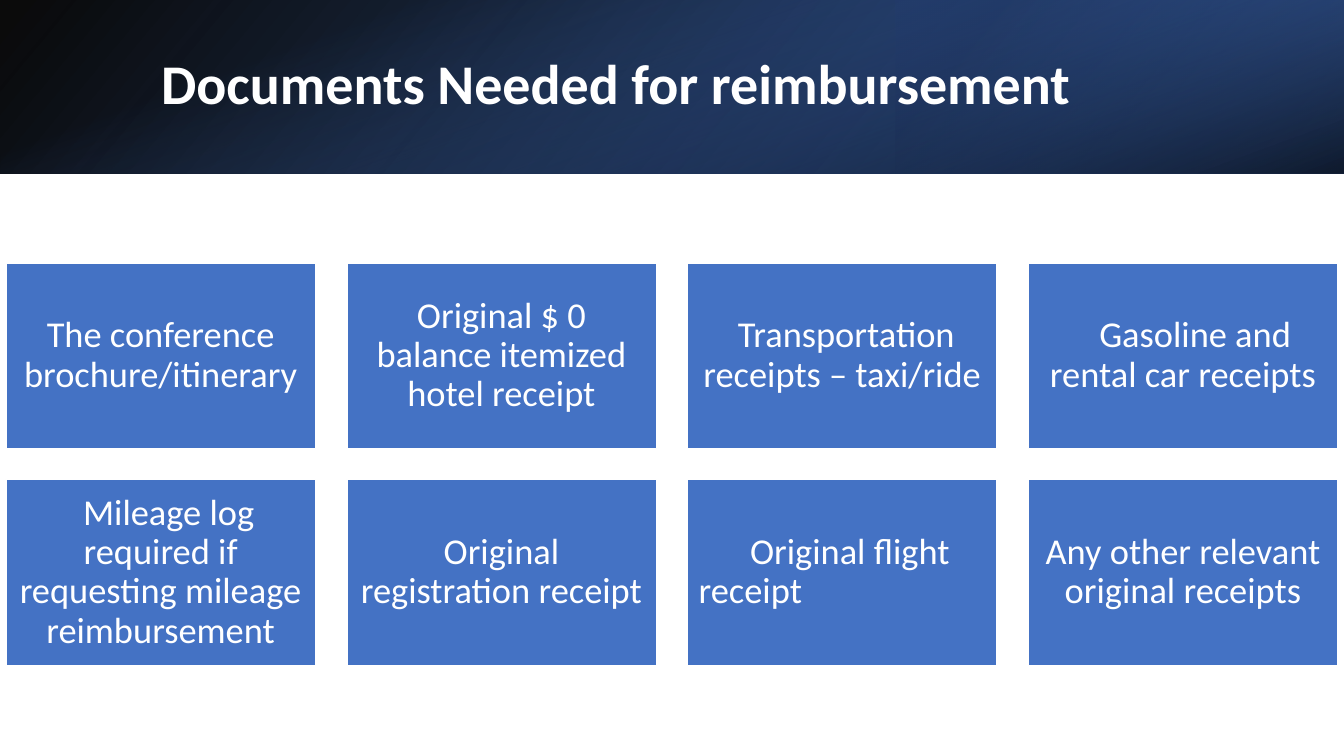
"""Slide listing the documents needed for reimbursement."""
from lxml import etree
from pptx import Presentation
from pptx import util as u
from pptx.dml.color import RGBColor
from pptx.enum import shapes, text
from pptx.oxml.ns import qn

WHITE = RGBColor(255, 255, 255)
BLACK = RGBColor(0, 0, 0)
BLUE = RGBColor(0x44, 0x72, 0xC4)
DEEP = RGBColor(0x2F, 0x55, 0x97)
NAVY = RGBColor(0x20, 0x38, 0x64)

WIDE, HIGH, BAND = 13.33, 7.5, 1.72
TITLE = "Documents Needed for reimbursement"
MID, LEFT = text.PP_ALIGN.CENTER, text.PP_ALIGN.LEFT
CARDS = [
    ("The conference brochure/itinerary", MID, 0),
    ("Original $ 0 balance itemized hotel receipt", MID, 0),
    ("Transportation receipts – taxi/ride", MID, 0.08),
    ("Gasoline and rental car receipts", MID, 0.24),
    ("Mileage log required if requesting mileage reimbursement", MID, 0.16),
    ("Original registration receipt", MID, 0),
    ("Original flight receipt", LEFT, 0.51),
    ("Any other relevant original receipts", MID, 0),
]
COLS, CARD_W, CARD_H, GAP = 4, 3.07, 1.84, 0.31
EDGE, TOP = 0.06, 2.61
SIDE = (WIDE - BAND) / 2
LAYERS = [
    ((0, 0, WIDE, BAND), 0, True, 140, [(0, BLACK, 96), (100, DEEP, 100 - 4)]),
    ((WIDE * 2 / 3, 0, WIDE / 3, BAND), 180, True, 320,
     [(19, NAVY, 68), (100, BLUE, 79)]),
    ((SIDE, -SIDE, BAND, WIDE), 90, False, 340,
     [(23, BLUE, 0), (99, BLACK, 74)]),
]
LAYERS[0][4][1] = (100, DEEP, 100)


def rect(slide, box):
    part = slide.shapes.add_shape(shapes.MSO_SHAPE.RECTANGLE, *map(u.Inches, box))
    part.shadow.inherit = False
    return part


def layer(slide, box, turn, flip, angle, stops):
    part = rect(slide, box)
    part.rotation = turn
    part.line.fill.background()
    if flip:
        part._element.spPr.find(qn("a:xfrm")).set("flipH", "1")
    part.fill.gradient()
    part.fill.gradient_angle = 360 - angle
    for stop, (place, color, alpha) in zip(part.fill.gradient_stops, stops):
        stop.position = place / 100
        stop.color.rgb = color
    for node, (_, _, alpha) in zip(part._element.xpath(".//a:gs/a:srgbClr"), stops):
        etree.SubElement(node, qn("a:alpha")).set("val", str(alpha * 1000))


def write(part, words, size, bold=False, align=LEFT, indent=0, pad=0.11):
    frame = part.text_frame
    frame.word_wrap = True
    frame.vertical_anchor = text.MSO_ANCHOR.MIDDLE
    frame.margin_left = frame.margin_right = u.Inches(pad)
    frame.margin_top = frame.margin_bottom = u.Inches(pad)
    para = frame.paragraphs[0]
    para.alignment, para.line_spacing = align, 0.9
    if indent:
        para._p.get_or_add_pPr().set("indent", str(u.Inches(indent)))
    run = para.add_run()
    run.text = words
    run.font.name, run.font.size, run.font.bold = "Calibri", u.Pt(size), bold
    run.font.color.rgb = WHITE


def main():
    deck = Presentation()
    deck.slide_width, deck.slide_height = u.Inches(WIDE), u.Inches(HIGH)
    slide = deck.slides.add_slide(deck.slide_layouts[6])
    for item in LAYERS:
        layer(slide, *item)
    title = slide.shapes.add_textbox(*map(u.Inches, (1.5, 0.38, 10.98, 0.96)))
    write(title, TITLE, 40, bold=True, pad=0.1)
    for i, (words, align, indent) in enumerate(CARDS):
        row, col = divmod(i, COLS)
        x = EDGE + col * (CARD_W + GAP)
        y = TOP + row * (CARD_H + GAP)
        card = rect(slide, (x, y, CARD_W, CARD_H))
        card.fill.solid()
        card.fill.fore_color.rgb = BLUE
        card.line.color.rgb = WHITE
        card.line.width = u.Pt(1)
        write(card, words, 26, align=align, indent=indent)
    deck.save("out.pptx")


if __name__ == "__main__":
    main()
